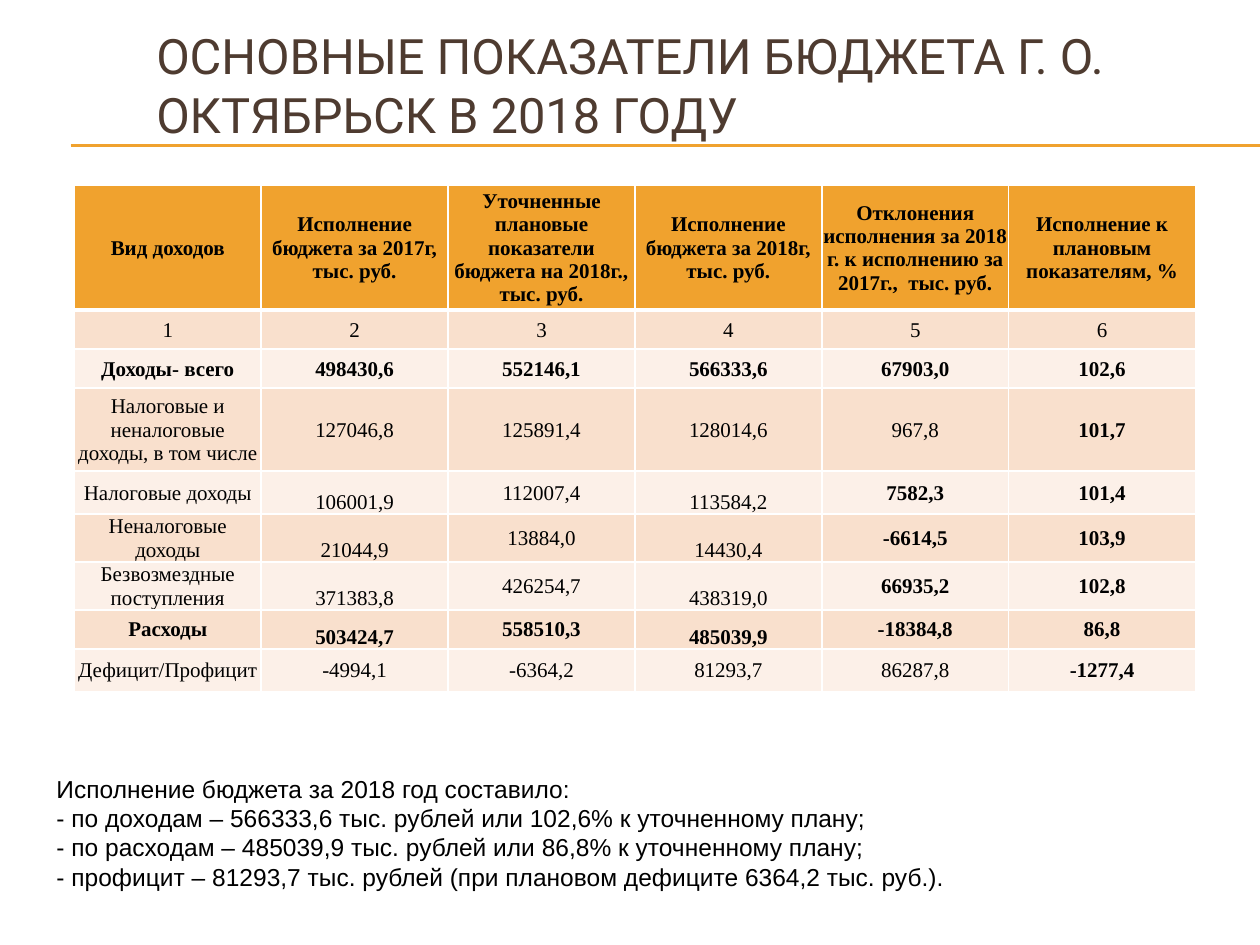
from lxml import etree
from pptx import Presentation
from pptx.dml.color import RGBColor
from pptx.enum.shapes import MSO_CONNECTOR
from pptx.enum.text import MSO_ANCHOR, PP_ALIGN
from pptx.oxml.ns import qn
from pptx.util import Inches, Pt

MIDDLE, BOTTOM = MSO_ANCHOR.MIDDLE, MSO_ANCHOR.BOTTOM
LEFT, CENTER = PP_ALIGN.LEFT, PP_ALIGN.CENTER
STRAIGHT = MSO_CONNECTOR.STRAIGHT

# Content
TITLE = "ОСНОВНЫЕ ПОКАЗАТЕЛИ БЮДЖЕТА Г. О. ОКТЯБРЬСК В 2018 ГОДУ"
HEADER = [
    "Вид доходов",
    "Исполнение бюджета за 2017г, тыс. руб.",
    "Уточненные плановые показатели бюджета на 2018г., тыс. руб.",
    "Исполнение бюджета за 2018г, тыс. руб.",
    "Отклонения исполнения за 2018 г. к исполнению за 2017г.,  тыс. руб.",
    "Исполнение к плановым показателям, %",
]
# Each row: height, first bold column, columns set at the bottom, cells
BUDGET = [
    (0.99, 0, (), HEADER),
    (0.31, 6, (), ["1", "2", "3", "4", "5", "6"]),
    (0.31, 0, (), ["Доходы- всего", "498430,6", "552146,1", "566333,6", "67903,0", "102,6"]),
    (0.66, 5, (), ["Налоговые и неналоговые доходы, в том числе",
                   "127046,8", "125891,4", "128014,6", "967,8", "101,7"]),
    (0.34, 4, (1, 3), ["Налоговые доходы", "106001,9", "112007,4", "113584,2", "7582,3", "101,4"]),
    (0.34, 4, (1, 3), ["Неналоговые доходы", "21044,9", "13884,0", "14430,4", "-6614,5", "103,9"]),
    (0.34, 4, (1, 3), ["Безвозмездные поступления",
                       "371383,8", "426254,7", "438319,0", "66935,2", "102,8"]),
    (0.31, 0, (1, 3), ["Расходы", "503424,7", "558510,3", "485039,9", "-18384,8", "86,8"]),
    (0.34, 5, (), ["Дефицит/Профицит", "-4994,1", "-6364,2", "81293,7", "86287,8", "-1277,4"]),
]
SUMMARY = [
    "Исполнение бюджета за 2018 год составило:",
    "- по доходам – 566333,6 тыс. рублей или 102,6% к уточненному плану;",
    "- по расходам – 485039,9 тыс. рублей или 86,8% к уточненному плану;",
    "- профицит – 81293,7 тыс. рублей (при плановом дефиците 6364,2 тыс. руб.).",
]
COLORS = {"title": "4E3B30", "accent": "F0A22E", "odd": "F9E0CD",
          "even": "FCF0E8", "border": "FFFFFF", "text": "000000"}
TABLE_LEFT, TABLE_TOP, TABLE_WIDTH = 0.59, 1.47, 8.9


def color(name):
    return RGBColor.from_string(COLORS[name])


def format_text(frame, font, size, ink, align, bold=False):
    for paragraph in frame.paragraphs:
        paragraph.alignment = align
        for run in paragraph.runs:
            run.font.name, run.font.size, run.font.bold = font, Pt(size), bold
            run.font.color.rgb = color(ink)


def add_border(cell, side, points):
    line = etree.SubElement(cell._tc.get_or_add_tcPr(), qn("a:" + side), w=str(Pt(points)))
    fill = etree.SubElement(line, qn("a:solidFill"))
    etree.SubElement(fill, qn("a:srgbClr"), val=COLORS["border"])


prs = Presentation()
prs.slide_width, prs.slide_height = Inches(10), Inches(7.5)
slide = prs.slides.add_slide(prs.slide_layouts[5])

# Double rule under the title
for y in (1.15, 1.16):
    rule = slide.shapes.add_connector(STRAIGHT, Inches(0.56), Inches(y), prs.slide_width, Inches(y))
    rule.line.color.rgb = color("accent")
    rule.line.width = Pt(0.75)
    etree.SubElement(rule._element.spPr, qn("a:effectLst"))

# Title
title = slide.shapes.title
title.left, title.top, title.width, title.height = map(Inches, (1.14, 0.21, 8.69, 0.92))
title.text_frame.text = TITLE
title.text_frame.word_wrap = True
title.text_frame.vertical_anchor = MIDDLE
format_text(title.text_frame, "Roboto", 27.9, "title", LEFT)

# Budget table
table_height = sum(row[0] for row in BUDGET)
table = slide.shapes.add_table(
    len(BUDGET), len(HEADER), Inches(TABLE_LEFT), Inches(TABLE_TOP),
    Inches(TABLE_WIDTH), Inches(table_height)).table
for column in table.columns:
    column.width = Inches(TABLE_WIDTH / len(HEADER))
for r, (height, bold_from, low_columns, values) in enumerate(BUDGET):
    table.rows[r].height = Inches(height)
    band = "accent" if r == 0 else "odd" if r % 2 else "even"
    for c, value in enumerate(values):
        cell = table.cell(r, c)
        cell.text = value
        cell.margin_left = cell.margin_right = cell.margin_top = Inches(0.01)
        cell.margin_bottom = 0
        cell.vertical_anchor = BOTTOM if c in low_columns else MIDDLE
        format_text(cell.text_frame, "Times New Roman", 12, "text", CENTER, c >= bold_from)
        for side, points in (("lnL", 1), ("lnR", 1), ("lnT", 3 if r == 1 else 1),
                             ("lnB", 3 if r == 0 else 1)):
            add_border(cell, side, points)
        cell.fill.solid()
        cell.fill.fore_color.rgb = color(band)

# Summary
summary = slide.shapes.add_textbox(*map(Inches, (0.35, 6.09, 9.53, 1.04))).text_frame
summary.word_wrap = True
summary.text = "\n".join(SUMMARY)
format_text(summary, "Arial", 14, "text", LEFT)

prs.save("out.pptx")
